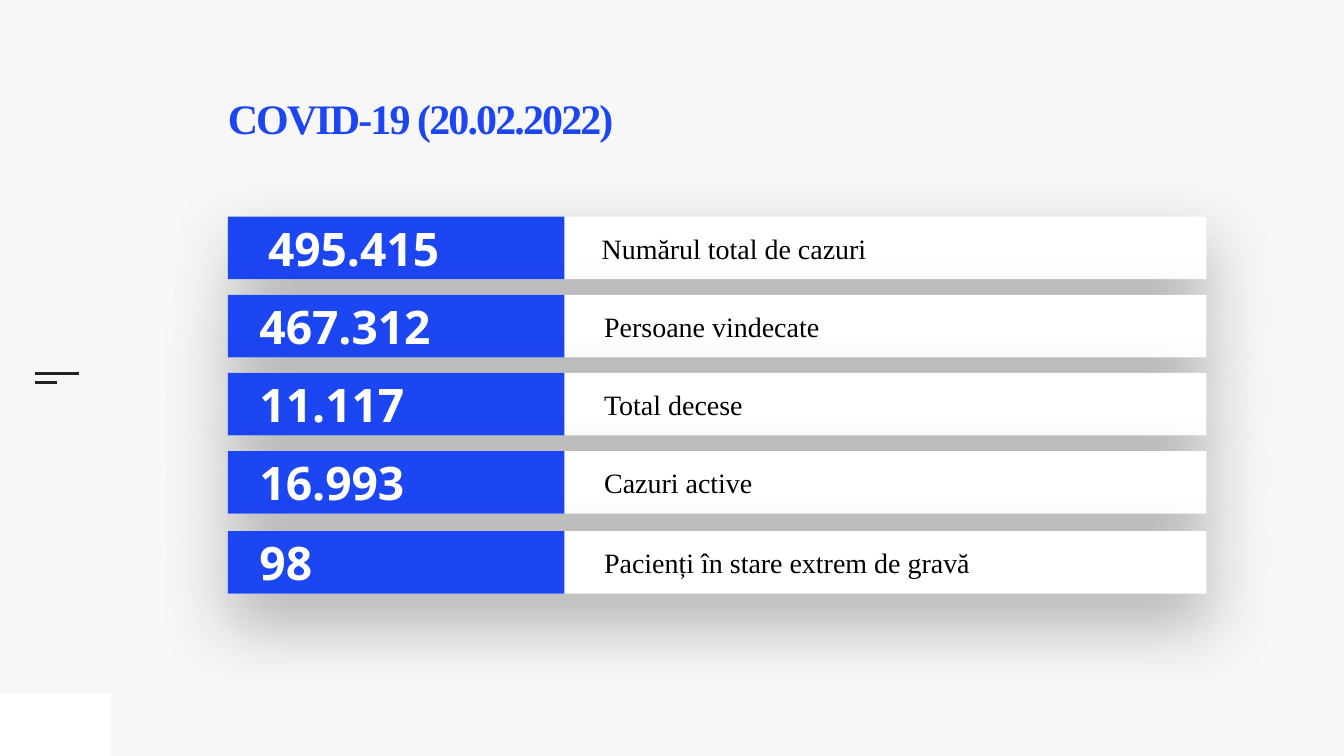
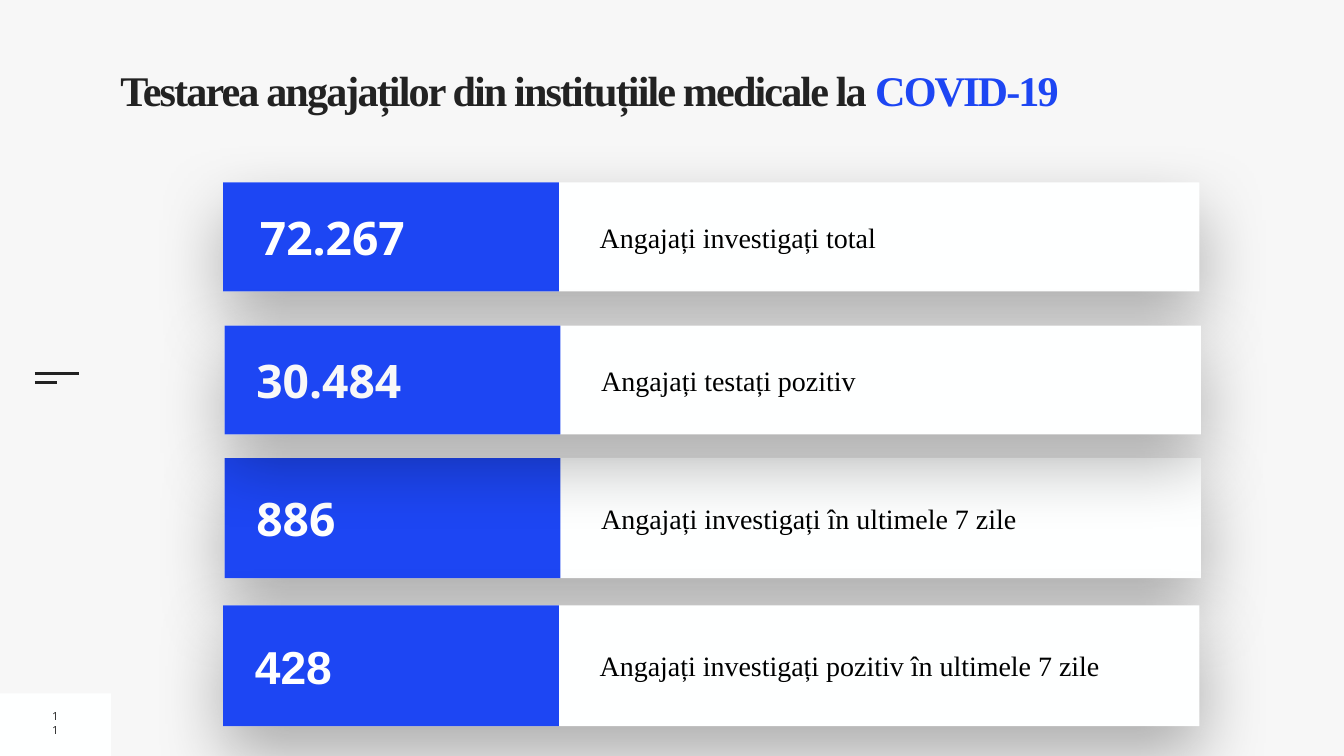
from dataclasses import dataclass

from lxml import etree
from pptx import Presentation
from pptx import slide as sl
from pptx import util as u
from pptx.dml import color, fill
from pptx.enum import shapes, text
from pptx.oxml import ns
from pptx.shapes import autoshape
from pptx.shapes import shapetree as tree

BLUE, WHITE, INK, BLACK = "1D46F3", "FEFFFF", "222222", "000000"
PAPER = "F7F7F7"
SERIF, SANS = "Times New Roman", "Open Sans"
TITLE_ONLY = 5


@dataclass
class Bar:
    """One statistic; the text offsets are measured from the bar's left edge."""
    value: str
    label: str
    left: float
    top: float
    card_inset: float = 0
    value_offset: float = 0.53
    label_offset: float = 7.37
    value_font: str = SANS
    value_color: str = "FFFFFF"


@dataclass
class BarStyle:
    width: float
    value_width: float


@dataclass
class TitleSpan:
    wording: str
    color: str


CASE_STYLE = BarStyle(19.42, 6.68)
CASE_HEIGHT = 1.24
CASES = [
    Bar("495.415", "Numărul total de cazuri", 4.52, 4.3, 0.17, 0.7, 7.32),
    Bar("467.312", "Persoane vindecate", 4.52, 5.85),
    Bar("11.117", "Total decese", 4.52, 7.4),
    Bar("16.993", "Cazuri active", 4.52, 8.95),
    Bar("98", "Pacienți în stare extrem de gravă", 4.52, 10.54),
]

STAFF_STYLE = BarStyle(19.37, 6.66)
# Stacking order matters: a later bar casts its shadow on an earlier one.
STAFF = [
    (Bar("72.267", "Angajați investigați total", 4.43, 3.62, value_offset=0.63), 2.16),
    (Bar("886", "Angajați investigați în ultimele 7 zile", 4.46, 9.09), 2.38),
    (Bar("428", "Angajați investigați pozitiv în ultimele 7 zile", 4.43, 12.01,
         value_font="Arial"), 2.4),
    (Bar("30.484", "Angajați testați pozitiv", 4.46, 6.46, value_color="F8F8F8"), 2.16),
]


def rgb(code: str) -> color.RGBColor:
    return color.RGBColor.from_string(code)


def paint(target: fill.FillFormat, code: str) -> None:
    target.solid()
    target.fore_color.rgb = rgb(code)


def add_rect(parent: tree._BaseGroupShapes, left: float, top: float,
             width: float, height: float, code: str) -> autoshape.Shape:
    rect = parent.add_shape(shapes.MSO_SHAPE.RECTANGLE, u.Inches(left), u.Inches(top),
                            u.Inches(width), u.Inches(height))
    rect.shadow.inherit = False
    paint(rect.fill, code)
    rect.line.fill.background()
    return rect


def add_soft_shadow(rect: autoshape.Shape) -> None:
    effects = rect.element.spPr.find(ns.qn("a:effectLst"))
    shadow = etree.SubElement(effects, ns.qn("a:outerShdw"), blurRad=str(u.Pt(100)),
                              dist=str(u.Pt(40)), dir="5400000", rotWithShape="0")
    tint = etree.SubElement(shadow, ns.qn("a:srgbClr"), val=BLACK)
    etree.SubElement(tint, ns.qn("a:alpha"), val="30000")


def add_text(parent: tree._BaseGroupShapes, wording: str, left: float, middle: float,
             width: float, height: float, size: float, font: str, code: str,
             bold: bool = False, align: text.PP_ALIGN = text.PP_ALIGN.LEFT) -> None:
    """Add a text box centred vertically on middle."""
    box = parent.add_textbox(u.Inches(left), u.Inches(middle - height / 2),
                             u.Inches(width), u.Inches(height))
    frame = box.text_frame
    frame.word_wrap = True
    frame.vertical_anchor = text.MSO_ANCHOR.MIDDLE
    frame.margin_left = frame.margin_right = u.Inches(0.1)
    frame.margin_top = frame.margin_bottom = u.Inches(0.1)
    para = frame.paragraphs[0]
    para.text = wording
    para.alignment = align
    para.font.size = u.Pt(size)
    para.font.name = font
    para.font.bold = bold
    para.font.color.rgb = rgb(code)


def add_bar(page: sl.Slide, bar: Bar, height: float, style: BarStyle) -> None:
    parts = page.shapes.add_group_shape().shapes
    middle = bar.top + height / 2
    card = add_rect(parts, bar.left + bar.card_inset, bar.top,
                    style.width - bar.card_inset, height, WHITE)
    add_soft_shadow(card)
    add_text(parts, bar.label, bar.left + bar.label_offset, middle,
             style.width - bar.label_offset - 0.25, 0.85, 40, SERIF, BLACK)
    add_rect(parts, bar.left, bar.top, style.value_width, height, BLUE)
    add_text(parts, bar.value, bar.left + bar.value_offset, middle,
             style.value_width - bar.value_offset, 1.31, 66,
             bar.value_font, bar.value_color, bold=True)


def add_frame(page: sl.Slide) -> None:
    """Add the corner block and the two short rules at the left edge."""
    add_rect(page.shapes, 0, 13.76, 2.2, 1.24, WHITE)
    for y, right in ((7.41, 1.57), (7.59, 1.13)):
        rule = page.shapes.add_connector(shapes.MSO_CONNECTOR.STRAIGHT, u.Inches(0.69),
                                         u.Inches(y), u.Inches(right), u.Inches(y))
        rule.line.color.rgb = rgb(INK)
        rule.line.width = u.Pt(3)
        etree.SubElement(rule.element.spPr, ns.qn("a:effectLst"))


def set_title(page: sl.Slide, spans: list[TitleSpan], left: float, top: float,
              width: float, height: float, size: float) -> None:
    title = page.shapes.title
    title.left, title.top = u.Inches(left), u.Inches(top)
    title.width, title.height = u.Inches(width), u.Inches(height)
    frame = title.text_frame
    frame.margin_left = frame.margin_right = frame.margin_top = frame.margin_bottom = 0
    frame.vertical_anchor = text.MSO_ANCHOR.TOP
    frame.auto_size = text.MSO_AUTO_SIZE.NONE
    frame.word_wrap = True
    para = frame.paragraphs[0]
    para.alignment = text.PP_ALIGN.LEFT
    para.line_spacing = 0.8
    para.font.size = u.Pt(size)
    para.font.name = SERIF
    para.font.bold = True
    for part in spans:
        span = para.add_run()
        span.text = part.wording
        span.font.color.rgb = rgb(part.color)
        span.font._element.set("spc", "-270")


def add_page(deck: Presentation) -> sl.Slide:
    page = deck.slides.add_slide(deck.slide_layouts[TITLE_ONLY])
    paint(page.background.fill, PAPER)
    add_frame(page)
    return page


def build_cases(deck: Presentation) -> None:
    page = add_page(deck)
    set_title(page, [TitleSpan("COVID-19 (20.02.2022)", BLUE)], 4.52, 2.03, 13.01, 1.86, 60)
    for bar in CASES:
        add_bar(page, bar, CASE_HEIGHT, CASE_STYLE)


def build_staff_tests(deck: Presentation) -> None:
    page = add_page(deck)
    set_title(page, [TitleSpan("Testarea angajaților din instituțiile medicale la ", INK),
                     TitleSpan("COVID-19", BLUE)], 2.39, 1.48, 23, 1.52, 60.3)
    add_text(page.shapes, "11", 0.93, 14.35, 0.34, 0.51, 16, SANS, INK,
             align=text.PP_ALIGN.CENTER)
    for bar, height in STAFF:
        add_bar(page, bar, height, STAFF_STYLE)


def main() -> None:
    deck = Presentation()
    deck.slide_width, deck.slide_height = u.Inches(26.67), u.Inches(15)
    build_cases(deck)
    build_staff_tests(deck)
    deck.save("out.pptx")


if __name__ == "__main__":
    main()
